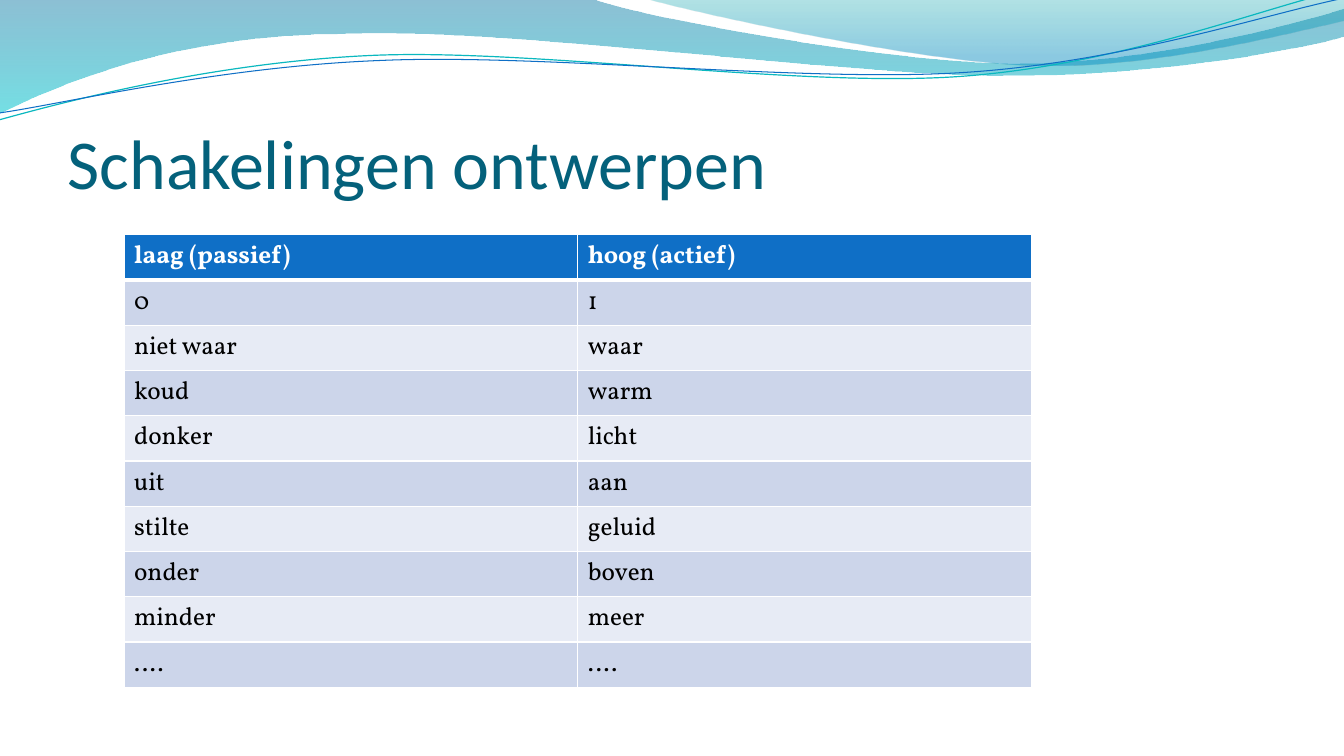
from dataclasses import dataclass
from math import cos, radians, sin

from lxml.etree import SubElement
from pptx import Presentation
from pptx.dml.color import RGBColor
from pptx.enum.text import MSO_ANCHOR, MSO_AUTO_SIZE, PP_ALIGN
from pptx.oxml.ns import qn
from pptx.shapes.autoshape import Shape
from pptx.slide import Slide, SlideMaster
from pptx.table import _Cell as Cell
from pptx.text.text import Font
from pptx.util import Inches, Pt

Point = tuple[float, float]
Segment = tuple[Point, ...]
TILT = -2.7
FIRST_MASTER_ID = 101


@dataclass
class Stop:
    position: float
    color: str
    opacity: int


@dataclass
class Wave:
    """A lone point is a straight segment; three points are a cubic curve."""
    start: Point
    segments: list[Segment]
    stops: tuple[Stop, ...]


@dataclass
class Strand:
    """A tilted curve that turns about its center."""
    center: Point
    start: Point
    segments: list[Segment]
    color: str
    width: float


WAVES = [
    Wave((0, -0.01), [
        ((5.87, -0.01),),
        ((6.34, 0.17), (8.85, 0.63), (10.11, 0.63)),
        ((11.38, 0.63), (12.78, 0.26), (13.33, 0.09)),
        ((13.35, 0.36),),
        ((13.11, 0.44), (11.6, 0.76), (9.94, 0.75)),
        ((8.29, 0.75), (5.09, 0.28), (3.43, 0.34)),
        ((1.72, 0.35), (0.61, 0.83), (-0.01, 1.13)),
        ((0, -0.01),),
    ], (Stop(0, "0074A1", 45), Stop(1, "00C6CF", 55))),
    Wave((6.39, -0.01), [
        ((6.79, 0.11), (9.09, 0.62), (10.25, 0.65)),
        ((11.41, 0.69), (12.82, 0.32), (13.33, 0.21)),
        ((13.33, 0),),
        ((6.39, -0.01),),
    ], (Stop(0, "00A1A9", 30), Stop(0.8, "008BBF", 45))),
]
STRANDS = [
    Strand((6.65, 0.57), (-0.01, 1.19), [
        ((0.64, 1.01), (2.11, 0.62), (3.69, 0.55)),
        ((5.27, 0.48), (7.9, 0.87), (9.5, 0.76)),
        ((11.1, 0.65), (12.52, 0.08), (13.31, -0.1)),
    ], "0AB8BF", 0.85),
    Strand((6.67, 0.59), (0, 1.12), [
        ((0.63, 1.03), (2.18, 0.66), (3.78, 0.6)),
        ((5.37, 0.53), (7.96, 0.82), (9.55, 0.72)),
        ((11.15, 0.62), (12.55, 0.14), (13.34, -0.02)),
    ], "0F6FC6", 0.75),
]
LEVELS = [
    ("laag (passief)", "hoog (actief)"),
    ("0", "1"),
    ("niet waar", "waar"),
    ("koud", "warm"),
    ("donker", "licht"),
    ("uit", "aan"),
    ("stilte", "geluid"),
    ("onder", "boven"),
    ("minder", "meer"),
    ("….", "…."),
]


def rgb(color: str) -> RGBColor:
    return RGBColor.from_string(color)


def style_font(font: Font, name: str, size: float, color: str, bold: bool = False) -> None:
    font.name, font.size, font.bold = name, Pt(size), bold
    font.color.rgb = rgb(color)


def level_point(point: Point, center: Point) -> Point:
    """Turn a point back by the tilt, to where it lies before rotation."""
    angle = radians(-TILT)
    dx, dy = point[0] - center[0], point[1] - center[1]
    return (center[0] + dx * cos(angle) - dy * sin(angle),
            center[1] + dx * sin(angle) + dy * cos(angle))


def draw_outline(slide: Slide, start: Point, segments: list[Segment], close: bool) -> Shape:
    """Draw the outline, merging each run of three points into one cubic curve."""
    points = [start, *(point for segment in segments for point in segment)]
    vertices = [(Inches(x), Inches(y)) for x, y in points]
    builder = slide.shapes.build_freeform(*vertices[0])
    builder.add_line_segments(vertices[1:], close=close)
    shape = builder.convert_to_shape()
    shape.shadow.inherit = False
    lines = iter(list(shape._element.iter(qn("a:lnTo"))))
    for segment in segments:
        parts = [next(lines) for _ in segment]
        if len(parts) == 3:
            parts[0].tag = qn("a:cubicBezTo")
            for part in parts[1:]:
                parts[0].append(part[0])
                part.getparent().remove(part)
    return shape


def draw_wave(slide: Slide, wave: Wave) -> Shape:
    shape = draw_outline(slide, wave.start, wave.segments, close=True)
    shape.line.fill.background()
    shape.fill.gradient()
    shape.fill.gradient_angle = 270
    for gradient_stop, stop in zip(shape.fill.gradient_stops, wave.stops):
        gradient_stop.position = stop.position
        gradient_stop.color.rgb = rgb(stop.color)
    for color, stop in zip(shape._element.spPr.iter(qn("a:srgbClr")), wave.stops):
        SubElement(color, qn("a:alpha"), val=str(stop.opacity * 1000))
    return shape


def draw_strand(slide: Slide, strand: Strand) -> Shape:
    segments = [tuple(level_point(point, strand.center) for point in segment)
                for segment in strand.segments]
    shape = draw_outline(slide, level_point(strand.start, strand.center), segments, close=False)
    shape.rotation = TILT
    shape.fill.background()
    shape.line.color.rgb = rgb(strand.color)
    shape.line.width = Pt(strand.width)
    return shape


def move_to_master(master: SlideMaster, shapes: list[Shape]) -> None:
    first_placeholder = master.placeholders[0]._element
    for number, shape in enumerate(shapes, FIRST_MASTER_ID):
        shape._element.nvSpPr.cNvPr.set("id", str(number))
        first_placeholder.addprevious(shape._element)


def set_title(slide: Slide, text: str) -> None:
    title = slide.shapes.title
    title.left, title.top = Inches(0.67), Inches(0.77)
    title.width, title.height = Inches(12), Inches(1.25)
    frame = title.text_frame
    frame.text = text
    frame.auto_size = MSO_AUTO_SIZE.NONE
    frame.vertical_anchor = MSO_ANCHOR.BOTTOM
    frame.margin_left = frame.margin_right = frame.margin_bottom = 0
    frame.margin_top = Inches(0.05)
    para = frame.paragraphs[0]
    para.alignment = PP_ALIGN.LEFT
    style_font(para.runs[0].font, "Calibri", 50, "04617B")


def set_borders(cell: Cell, bottom: float) -> None:
    properties = cell._tc.get_or_add_tcPr()
    for side, width in (("L", 1), ("R", 1), ("T", 1), ("B", bottom)):
        line = SubElement(properties, qn(f"a:ln{side}"), w=str(Pt(width)))
        SubElement(SubElement(line, qn("a:solidFill")), qn("a:srgbClr"), val="FFFFFF")


def add_level_table(slide: Slide) -> None:
    frame = slide.shapes.add_table(len(LEVELS), len(LEVELS[0]), Inches(1.23),
                                   Inches(2.33), Inches(9), Inches(4.06))
    for row, texts in enumerate(LEVELS):
        header = row == 0
        fill = "0F6FC6" if header else "CCD5EA" if row % 2 else "E7EBF5"
        for column, text in enumerate(texts):
            cell = frame.table.cell(row, column)
            set_borders(cell, bottom=3 if header else 1)
            cell.fill.solid()
            cell.fill.fore_color.rgb = rgb(fill)
            cell.text_frame.text = text
            style_font(cell.text_frame.paragraphs[0].runs[0].font, "Vollkorn", 18,
                       "FFFFFF" if header else "000000", bold=header)


def main() -> None:
    deck = Presentation()
    deck.slide_width, deck.slide_height = Inches(13.33), Inches(7.5)
    page = deck.slides.add_slide(deck.slide_layouts.get_by_name("Title Only"))
    waves = [draw_wave(page, wave) for wave in WAVES]
    strands = [draw_strand(page, strand) for strand in STRANDS]
    move_to_master(deck.slide_master, waves + strands)
    set_title(page, "Schakelingen ontwerpen")
    add_level_table(page)
    deck.save("out.pptx")


if __name__ == "__main__":
    main()
